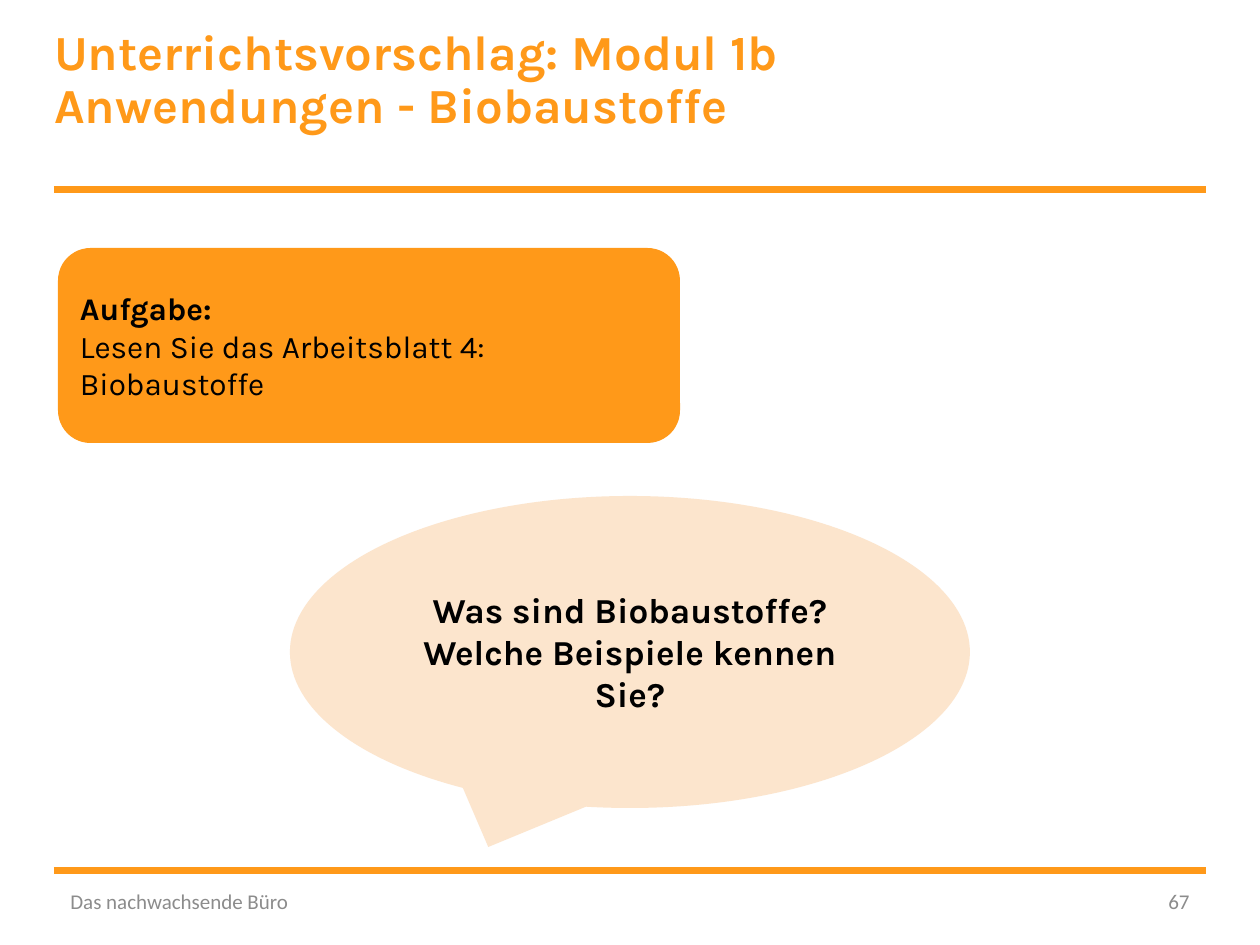
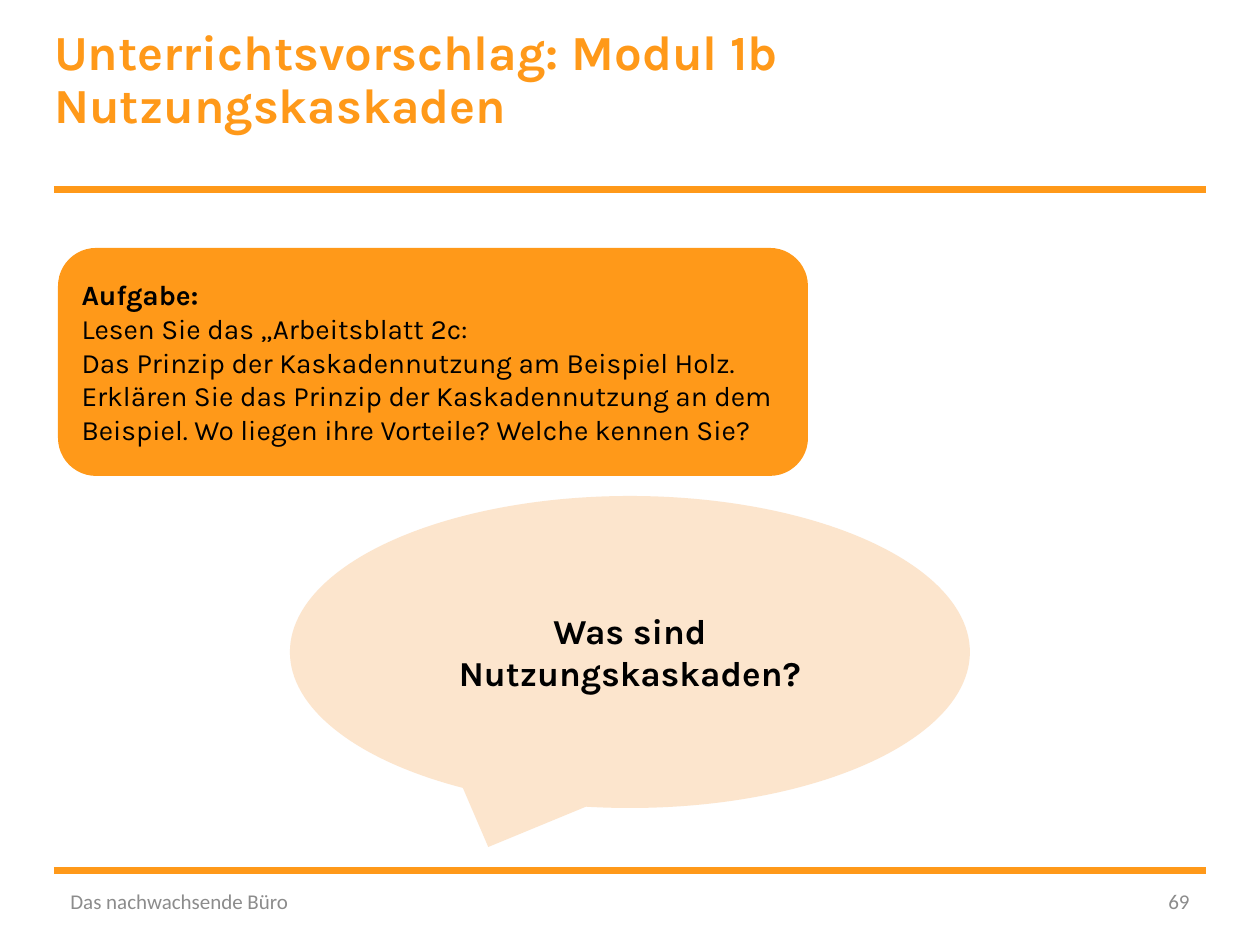
from lxml import etree
from pptx import Presentation
from pptx.dml.color import RGBColor
from pptx.enum.shapes import MSO_CONNECTOR as Connector, MSO_SHAPE as Shape
from pptx.enum.text import MSO_ANCHOR as Anchor, PP_ALIGN as Align
from pptx.oxml.ns import qn
from pptx.util import Pt

EMU_PER_PX = 914400 / 126
ORANGE, PEACH, BLACK, GREY = "FF9919", "FCE5CD", "000000", "8C8C8C"
HEAD_FONT, FOOT_FONT = "Karla", "Calibri"


def emu(*lengths):
    return [round(length * EMU_PER_PX) for length in lengths]


def color(hex_text):
    return RGBColor.from_string(hex_text)


class LessonDeck:
    def __init__(self):
        self.deck = Presentation()
        self.deck.slide_width, self.deck.slide_height = emu(1260, 945)
        self.page = None

    def new_page(self, title_lines, number):
        self.page = self.deck.slides.add_slide(self.deck.slide_layouts[6])
        for y in (190, 871):
            self.rule(y)
        self.title(title_lines)
        self.footer(58, 426, "Das nachwachsende Büro", Align.LEFT)
        self.footer(1125, 77, str(number), Align.RIGHT)

    def rule(self, y):
        line = self.page.shapes.add_connector(Connector.STRAIGHT, *emu(54, y, 1206, y))
        line.line.color.rgb = color(ORANGE)
        line.line.width = Pt(4)
        etree.SubElement(line._element.spPr, qn("a:effectLst"))

    def span(self, para, text, size, font, hue, bold=False):
        span = para.add_run()
        span.text = text
        span.font.size = Pt(size)
        span.font.name = font
        span.font.bold = bold
        span.font.color.rgb = color(hue)

    def text_box(self, *place):
        box = self.page.shapes.add_textbox(*emu(*place))
        box.text_frame.word_wrap = True
        return box.text_frame

    def title(self, lines):
        frame = self.text_box(54, 28, 866, 147)
        frame.margin_left = frame.margin_top = frame.margin_right = frame.margin_bottom = 0
        para = frame.paragraphs[0]
        para.line_spacing = 0.9
        for index, line in enumerate(lines):
            if index:
                para.add_line_break()
            self.span(para, line, 28, HEAD_FONT, ORANGE, bold=True)

    def footer(self, left, width, text, align):
        frame = self.text_box(left, 876, width, 50)
        frame.vertical_anchor = Anchor.MIDDLE
        para = frame.paragraphs[0]
        para.alignment = align
        self.span(para, text, 12, FOOT_FONT, GREY)

    def panel(self, kind, place, fill, lines, size, align):
        """Filled shape with text; lines are (text, bold) pairs."""
        panel = self.page.shapes.add_shape(kind, *emu(*place))
        panel.shadow.inherit = False
        panel.fill.solid()
        panel.fill.fore_color.rgb = color(fill)
        panel.line.fill.background()
        frame = panel.text_frame
        frame.word_wrap = True
        frame.vertical_anchor = Anchor.MIDDLE
        for index, (text, bold) in enumerate(lines):
            para = frame.add_paragraph() if index else frame.paragraphs[0]
            para.alignment = align
            self.span(para, text, size, HEAD_FONT, BLACK, bold)

    def task(self, width, height, size, lines):
        lines = [("Aufgabe:", True)] + [(line, False) for line in lines]
        self.panel(Shape.ROUNDED_RECTANGLE, (58, 248, width, height), ORANGE,
                   lines, size, Align.LEFT)

    def question(self, lines):
        self.panel(Shape.OVAL_CALLOUT, (290, 496, 680, 312), PEACH,
                   [(line, True) for line in lines], 20, Align.CENTER)


def main():
    module = "Unterrichtsvorschlag: Modul 1b"
    lesson = LessonDeck()

    lesson.new_page([module, "Anwendungen - Biobaustoffe"], 67)
    lesson.task(622, 195, 18, ["Lesen Sie das Arbeitsblatt 4: Biobaustoffe"])
    lesson.question(["Was sind Biobaustoffe?", "Welche Beispiele kennen Sie?"])

    lesson.new_page([module, "Nutzungskaskaden"], 69)
    lesson.task(750, 228, 16, [
        "Lesen Sie das „Arbeitsblatt 2c:",
        "Das Prinzip der Kaskadennutzung am Beispiel Holz.",
        "Erklären Sie das Prinzip der Kaskadennutzung an dem Beispiel. "
        "Wo liegen ihre Vorteile? Welche kennen Sie?",
    ])
    lesson.question(["Was sind Nutzungskaskaden?"])

    lesson.deck.save("out.pptx")


if __name__ == "__main__":
    main()
